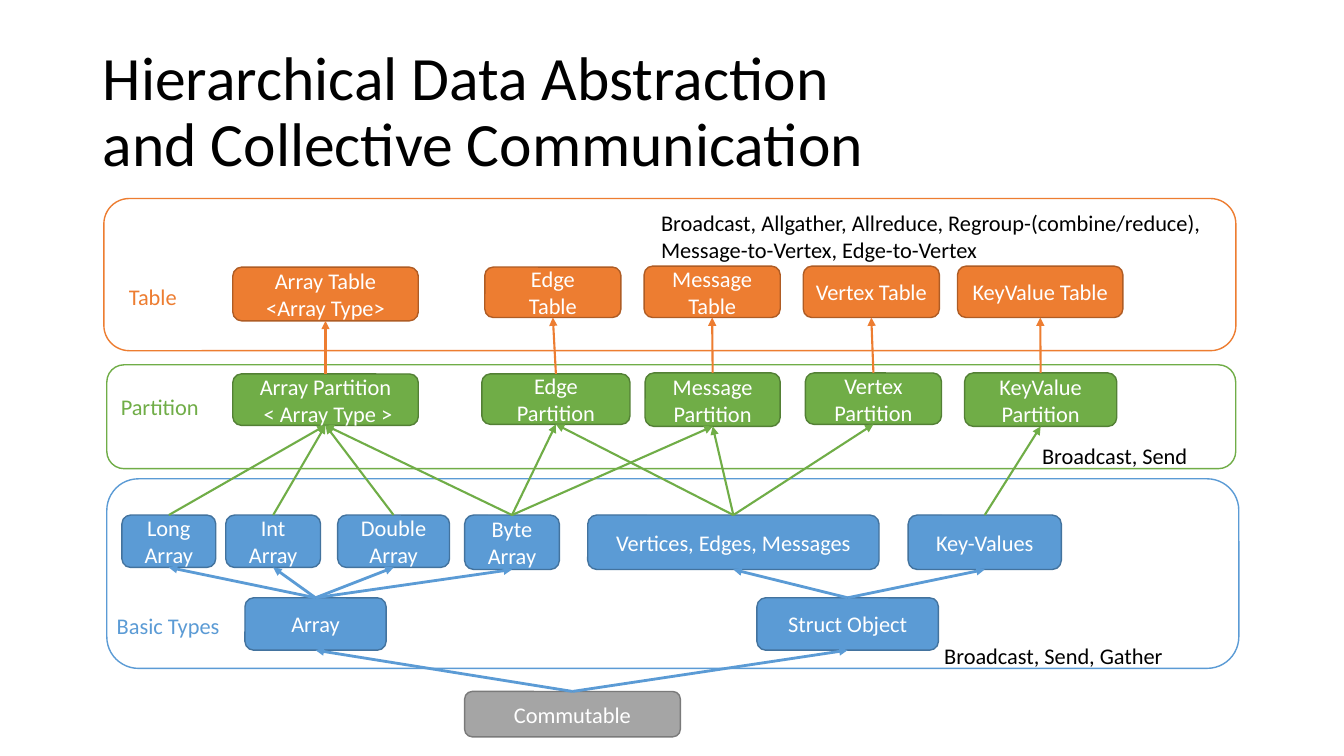
import dataclasses

import lxml.etree
import pptx
import pptx.dml.color
import pptx.enum.shapes
import pptx.enum.text
import pptx.oxml.ns
import pptx.util

Pt = pptx.util.Pt
ALIGN = pptx.enum.text.PP_ALIGN
ANCHOR = pptx.enum.text.MSO_ANCHOR
ROUNDED = pptx.enum.shapes.MSO_SHAPE.ROUNDED_RECTANGLE
TOP, BOTTOM = 0, 2


@dataclasses.dataclass(frozen=True)
class Theme:
    font: str = "Calibri"
    title_size: int = 44
    body_size: int = 16
    black: str = "000000"
    white: str = "FFFFFF"
    orange: str = "ED7D31"
    orange_edge: str = "AF5C24"
    green: str = "70AD47"
    green_edge: str = "538035"
    blue: str = "5B9BD5"
    blue_edge: str = "43739E"
    gray: str = "A5A5A5"
    gray_edge: str = "7A7A7A"


def rgb(color):
    return pptx.dml.color.RGBColor.from_string(color)


class Diagram:
    """Draws the elements of one page in the given theme."""

    def __init__(self, page, theme):
        self.page = page
        self.theme = theme

    def fill_text(self, frame, text, color, size, align=ALIGN.LEFT, spacing=None):
        """Fill a frame: a newline starts a paragraph, a vertical tab breaks the line."""
        frame.word_wrap = True
        for index, paragraph_text in enumerate(text.split("\n")):
            para = frame.paragraphs[0] if index == 0 else frame.add_paragraph()
            para.alignment = align
            para.line_spacing = spacing
            for part, line in enumerate(paragraph_text.split("\v")):
                if part:
                    para.add_line_break()
                span = para.add_run()
                span.text = line
                span.font.name = self.theme.font
                span.font.size = Pt(size)
                span.font.color.rgb = rgb(color)

    def title(self, text, left, top, width, height):
        holder = self.page.shapes.title
        holder.left, holder.top = Pt(left), Pt(top)
        holder.width, holder.height = Pt(width), Pt(height)
        frame = holder.text_frame
        frame.auto_size = pptx.enum.text.MSO_AUTO_SIZE.NONE
        frame.vertical_anchor = ANCHOR.MIDDLE
        self.fill_text(frame, text, self.theme.black, self.theme.title_size, spacing=0.9)

    def panel(self, left, top, width, height, fill, edge):
        box = self.page.shapes.add_shape(ROUNDED, Pt(left), Pt(top), Pt(width), Pt(height))
        box.shadow.inherit = False
        box.fill.solid()
        box.fill.fore_color.rgb = rgb(fill)
        box.line.color.rgb = rgb(edge)
        box.line.width = Pt(1)
        return box

    def node(self, text, left, top, width, height, fill, edge):
        box = self.panel(left, top, width, height, fill, edge)
        box.text_frame.vertical_anchor = ANCHOR.MIDDLE
        self.fill_text(box.text_frame, text, self.theme.white, self.theme.body_size, ALIGN.CENTER)
        return box

    def label(self, text, left, top, width, height, color):
        box = self.page.shapes.add_textbox(Pt(left), Pt(top), Pt(width), Pt(height))
        self.fill_text(box.text_frame, text, color, self.theme.body_size)

    def arrow(self, lower, upper, color, weight):
        """Point from the top of the lower box to the bottom of the upper one."""
        straight = pptx.enum.shapes.MSO_CONNECTOR.STRAIGHT
        link = self.page.shapes.add_connector(straight, 0, 0, 0, 0)
        link.begin_connect(lower, TOP)
        link.end_connect(upper, BOTTOM)
        link.line.color.rgb = rgb(color)
        link.line.width = Pt(weight)
        qn = pptx.oxml.ns.qn
        properties = link.element.spPr
        outline = properties.find(qn("a:ln"))
        lxml.etree.SubElement(outline, qn("a:tailEnd")).set("type", "triangle")
        lxml.etree.SubElement(properties, qn("a:effectLst"))


def main():
    deck = pptx.Presentation()
    deck.slide_width, deck.slide_height = Pt(960), Pt(540)
    theme = Theme()
    diagram = Diagram(deck.slides.add_slide(deck.slide_layouts[5]), theme)
    diagram.title("Hierarchical Data Abstraction \vand Collective Communication",
                  66.2, 28.8, 828, 104.4)

    for left, top, width, height, edge in (
        (76.3, 260.6, 806.4, 74.2, theme.green),
        (74.2, 141.8, 808.6, 108.7, theme.orange),
        (76.3, 342, 808.6, 135.4, theme.blue),
    ):
        diagram.panel(left, top, width, height, theme.white, edge)

    # Each level: fill, edge, then name, text, left, top, width, height
    levels = (
        (theme.orange, theme.orange_edge, (
            ("array table", "Array Table <Array Type>", 166.3, 190.8, 132.5, 38.4),
            ("edge table", "Edge\nTable", 346.3, 190.8, 97.2, 36),
            ("message table", "Message Table", 460.1, 190.1, 97.2, 36.7),
            ("vertex table", "Vertex Table", 573.8, 190.1, 97.2, 36.7),
            ("keyvalue table", "KeyValue Table", 684, 190.1, 118.1, 36.7),
        )),
        (theme.green, theme.green_edge, (
            ("array partition", "Array Partition\v < Array Type >", 166.3, 267.1, 132.5, 36.7),
            ("edge partition", "Edge Partition", 344.2, 267.1, 105.8, 36),
            ("message partition", "Message Partition", 460.8, 266.4, 96.5, 38.2),
            ("vertex partition", "Vertex Partition", 575.3, 266.4, 97.2, 36.7),
            ("keyvalue partition", "KeyValue Partition", 689, 266.4, 108.7, 38.2),
        )),
        (theme.blue, theme.blue_edge, (
            ("long", "Long Array", 87.1, 367.9, 67, 37.4),
            ("int", "Int Array", 161.3, 367.9, 67.7, 37.4),
            ("double", "Double Array", 241.2, 367.9, 79.9, 37.4),
            ("byte", "Byte Array", 331.9, 367.9, 67.7, 38.9),
            ("graph", "Vertices, Edges, Messages", 419.8, 367.9, 208.1, 38.9),
            ("key-values", "Key-Values", 648.7, 367.9, 109.4, 38.9),
            ("array", "Array", 175, 427, 100.8, 37.4),
            ("struct", "Struct Object", 540.7, 427, 129.6, 37.4),
        )),
        (theme.gray, theme.gray_edge, (
            ("commutable", "Commutable", 331.9, 493.9, 154.1, 32.4),
        )),
    )
    nodes = {}
    for fill, edge, members in levels:
        for name, text, *place in members:
            nodes[name] = diagram.node(text, *place, fill, edge)

    kinds = ("array", "edge", "message", "vertex", "keyvalue")
    links = (
        (theme.blue, 2, {
            "commutable": ("array", "struct"),
            "array": ("long", "int", "double", "byte"),
            "struct": ("graph", "key-values"),
        }),
        (theme.green, 1.5, {
            "long": ("array partition",),
            "int": ("array partition",),
            "double": ("array partition",),
            "byte": ("array partition", "edge partition", "message partition"),
            "graph": ("edge partition", "message partition", "vertex partition"),
            "key-values": ("keyvalue partition",),
        }),
        (theme.orange, 1.5, {f"{kind} partition": (f"{kind} table",) for kind in kinds}),
    )
    for color, weight, targets in links:
        for lower, uppers in targets.items():
            for upper in uppers:
                diagram.arrow(nodes[lower], nodes[upper], color, weight)

    for label in (
        ("Broadcast, Send, Gather", 667.4, 455, 203.8, 19.4, theme.black),
        ("Broadcast, Allgather, Allreduce, Regroup-(combine/reduce),\n"
         "Message-to-Vertex, Edge-to-Vertex", 465.1, 146.2, 411.8, 46.1, theme.black),
        ("Broadcast, Send", 737.3, 312.5, 145.4, 19.4, theme.black),
        ("Table", 85, 198.7, 110.2, 26.6, theme.orange),
        ("Partition", 79.2, 277.2, 110.2, 26.6, theme.green),
        ("Basic Types", 76.3, 433.4, 110.2, 26.6, theme.blue),
    ):
        diagram.label(*label)

    deck.save("out.pptx")


if __name__ == "__main__":
    main()
